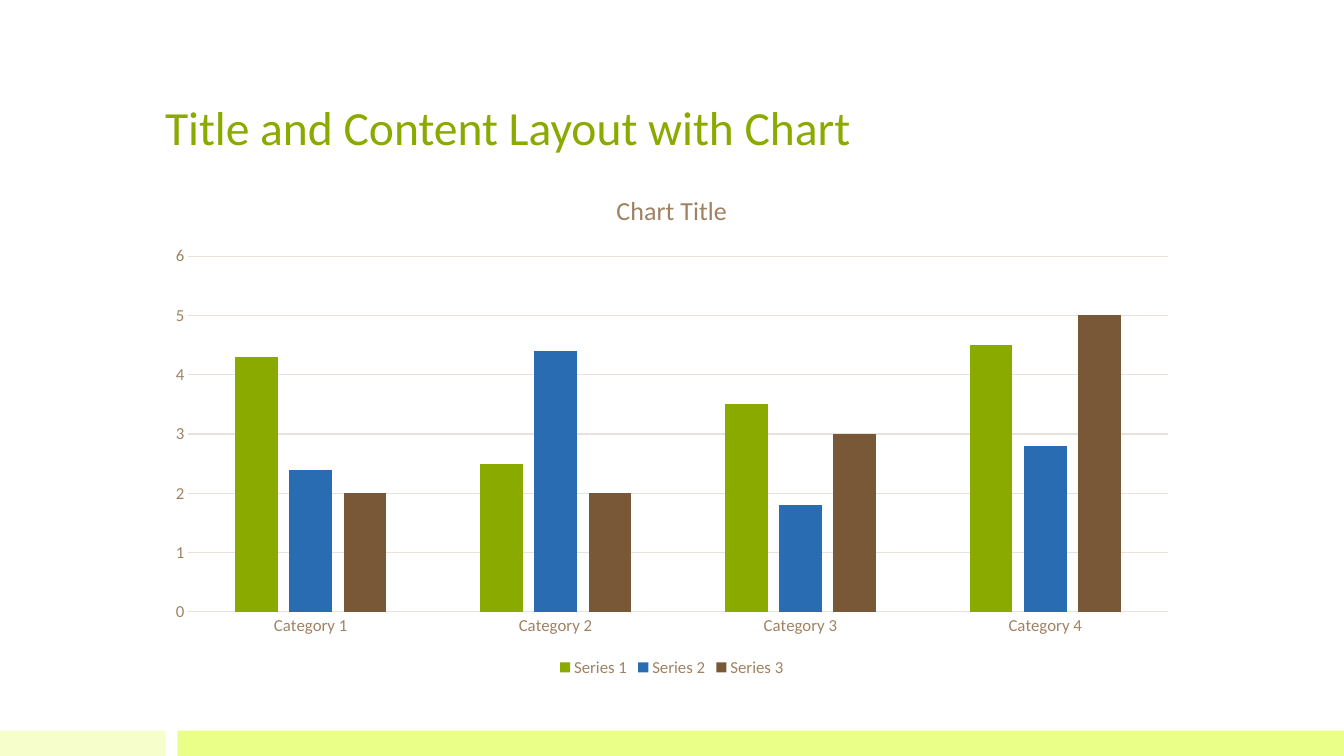
from pptx import Presentation
from pptx.chart.data import CategoryChartData
from pptx.dml.color import RGBColor
from pptx.enum.chart import XL_CHART_TYPE as ChartType
from pptx.enum.chart import XL_LEGEND_POSITION as LegendPosition
from pptx.enum.chart import XL_TICK_MARK as TickMark
from pptx.enum.shapes import MSO_SHAPE as Preset
from pptx.enum.text import MSO_ANCHOR as Anchor
from pptx.util import Cm, Pt

GREEN = RGBColor(0x8B, 0xAA, 0x00)
BLUE = RGBColor(0x2A, 0x6C, 0xB2)
BROWN = RGBColor(0x79, 0x58, 0x37)
DARK_BROWN = RGBColor(0x4D, 0x3E, 0x2F)
TAN = RGBColor(0xA0, 0x82, 0x63)
SAND = RGBColor(0xE9, 0xE2, 0xDB)
PALE_LIME = RGBColor(0xF6, 0xFF, 0xCC)
LIME = RGBColor(0xE9, 0xFF, 0x88)

PAGE_WIDTH, PAGE_HEIGHT = 33.87, 19.05
CONTENT_LEFT, CONTENT_WIDTH = 3.91, 26.04
BAND_HEIGHT = 0.64

CATEGORIES = [f"Category {number}" for number in range(1, 5)]
SERIES = [
    ("Series 1", (4.3, 2.5, 3.5, 4.5), GREEN),
    ("Series 2", (2.4, 4.4, 1.8, 2.8), BLUE),
    ("Series 3", (2, 2, 3, 5), BROWN),
]


def set_attributes(target, formats):
    for name, value in formats.items():
        setattr(target, name, value)


def style_font(font, size, color):
    set_attributes(font, {"name": "Calibri", "size": Pt(size), "bold": False})
    font.color.rgb = color


def style_line(line):
    line.color.rgb = SAND
    line.width = Pt(0.75)


def add_band(page, left, width, color):
    top = PAGE_HEIGHT - BAND_HEIGHT
    band = page.shapes.add_shape(
        Preset.RECTANGLE, Cm(left), Cm(top), Cm(width), Cm(BAND_HEIGHT))
    band.shadow.inherit = False
    band.fill.solid()
    band.fill.fore_color.rgb = color
    band.line.fill.background()


def add_title(page, text):
    box = page.shapes.add_textbox(
        Cm(CONTENT_LEFT), Cm(0.76), Cm(CONTENT_WIDTH), Cm(3.28))
    set_attributes(box.text_frame,
                   {"word_wrap": True, "vertical_anchor": Anchor.BOTTOM})
    span = box.text_frame.paragraphs[0].add_run()
    span.text = text
    style_font(span.font, 34, GREEN)


def style_axes(chart):
    for axis in (chart.category_axis, chart.value_axis):
        set_attributes(axis, {"major_tick_mark": TickMark.NONE,
                              "minor_tick_mark": TickMark.NONE})
        style_font(axis.tick_labels.font, 12, TAN)
    style_line(chart.category_axis.format.line)
    set_attributes(chart.value_axis, {"minimum_scale": 0, "maximum_scale": 6,
                                      "major_unit": 1})
    chart.value_axis.format.line.fill.background()
    style_line(chart.value_axis.major_gridlines.format.line)


def add_column_chart(page, title):
    data = CategoryChartData()
    data.categories = CATEGORIES
    for name, values, _ in SERIES:
        data.add_series(name, values)
    chart = page.shapes.add_chart(
        ChartType.COLUMN_CLUSTERED, Cm(CONTENT_LEFT), Cm(4.34),
        Cm(CONTENT_WIDTH), Cm(12.83), data).chart
    style_font(chart.font, 10, DARK_BROWN)

    span = chart.chart_title.text_frame.paragraphs[0].add_run()
    span.text = title
    style_font(span.font, 18.6, TAN)
    chart.chart_title.include_in_layout = False

    style_axes(chart)
    chart.has_legend = True
    set_attributes(chart.legend, {"position": LegendPosition.BOTTOM,
                                  "include_in_layout": False})
    style_font(chart.legend.font, 12, TAN)

    plot = chart.plots[0]
    set_attributes(plot, {"gap_width": 219, "overlap": -27,
                          "vary_by_categories": False})
    for series, (_, _, color) in zip(plot.series, SERIES):
        series.format.fill.solid()
        series.format.fill.fore_color.rgb = color


def main():
    deck = Presentation()
    set_attributes(deck, {"slide_width": Cm(PAGE_WIDTH),
                          "slide_height": Cm(PAGE_HEIGHT)})
    page = deck.slides.add_slide(deck.slide_layouts[6])
    add_band(page, 0, 4.17, PALE_LIME)
    add_band(page, 4.47, PAGE_WIDTH - 4.47, LIME)
    add_title(page, "Title and Content Layout with Chart")
    add_column_chart(page, "Chart Title")
    deck.save("out.pptx")


if __name__ == "__main__":
    main()
